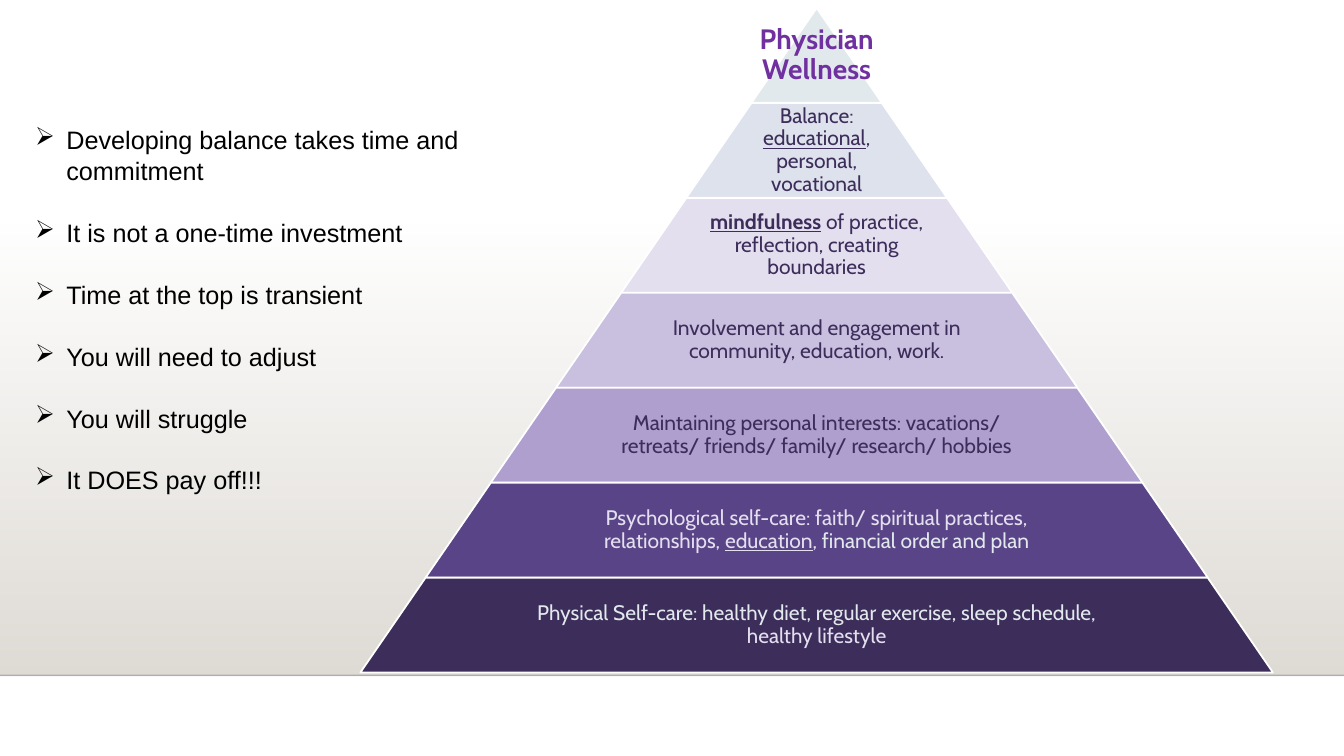
"""Build the physician wellness pyramid slide."""
from dataclasses import dataclass

import lxml.etree
import pptx
import pptx.dml.color
import pptx.enum.shapes
import pptx.enum.text
import pptx.oxml.ns
import pptx.util

Inches = pptx.util.Inches
Pt = pptx.util.Pt
qn = pptx.oxml.ns.qn

COLORS = {
    "backdrop": "DFDBD5", "rule": "000001", "white": "FFFFFF", "black": "000000",
    "title": "7030A0", "dark": "3C2D5A", "purple": "594487", "mid": "AF9FCF",
    "light": "C9BFDF", "pale": "E4DFEF", "blue": "DEE2ED", "mist": "E1E9EC",
}
SLIDE_WIDTH = 13.33
CENTER = 8.1
PYRAMID_TOP = 0.08
TIER_HEIGHT = 0.94
TIER_PITCH = 0.942
TIER_GROWTH = 1.293
SLOPE = 0.688
TEXT_SHARE = 0.65


@dataclass(frozen=True)
class Span:
    text: str
    color: str = "dark"
    bold: bool = False
    underline: bool = False


@dataclass(frozen=True)
class Tier:
    fill: str
    spans: tuple[Span, ...]
    size: int = 15
    text_share: float = TEXT_SHARE
    inset: float = 0.02


TIERS = (
    Tier("mist", (Span("Physician Wellness", "title", bold=True),), 20, 1, 0.03),
    Tier("blue", (Span("Balance: "), Span("educational", underline=True),
                  Span(", personal, vocational"))),
    Tier("pale", (Span("mindfulness", bold=True, underline=True),
                  Span(" of practice, reflection, creating boundaries"))),
    Tier("light", (Span("Involvement and engagement in community, education, work."),)),
    Tier("mid", (Span("Maintaining personal interests: vacations/ retreats/ friends/ "
                      "family/ research/ hobbies"),)),
    Tier("purple", (Span("Psychological self-care: faith/ spiritual practices, "
                         "relationships, ", "pale"),
                    Span("education", "pale", underline=True), Span(", ", "pale"),
                    Span("financial order and plan", "mist"))),
    Tier("dark", (Span("Physical Self-care: healthy diet, regular exercise, "
                       "sleep schedule, ", "mist"),
                  Span("healthy lifestyle", "pale"))),
)
REMINDERS = (
    "Developing balance takes time and commitment",
    "It is not a one-time investment",
    "Time at the top is transient",
    "You will need to adjust",
    "You will struggle",
    "It DOES pay off!!!",
)


def rgb(name: str) -> pptx.dml.color.RGBColor:
    return pptx.dml.color.RGBColor.from_string(COLORS[name])


def set_alpha(parent, percent: int) -> None:
    color = next(parent.iter(qn("a:srgbClr")))
    lxml.etree.SubElement(color, qn("a:alpha")).set("val", str(percent * 1000))


def draw_backdrop(page) -> None:
    panel = page.shapes.add_shape(pptx.enum.shapes.MSO_SHAPE.RECTANGLE, 0, Inches(2.21),
                                  Inches(SLIDE_WIDTH), Inches(4.49))
    panel.shadow.inherit = False
    panel.line.fill.background()
    panel.fill.gradient()
    panel.fill.gradient_angle = 270
    for stop, position in zip(panel.fill.gradient_stops, (0, 1)):
        stop.position = position
        stop.color.rgb = rgb("backdrop")
    set_alpha(panel.element.spPr, 0)

    rule = page.shapes.add_connector(pptx.enum.shapes.MSO_CONNECTOR.STRAIGHT,
                                     0, Inches(6.7), Inches(SLIDE_WIDTH), Inches(6.7))
    rule.line.color.rgb = rgb("rule")
    rule.line.width = Pt(1)
    set_alpha(rule.element.spPr, 20)
    lxml.etree.SubElement(rule.element.spPr, qn("a:effectLst"))


def draw_tier(page, index: int, tier: Tier) -> None:
    top = PYRAMID_TOP + index * TIER_PITCH
    width = (index + 1) * TIER_GROWTH
    band = page.shapes.add_shape(pptx.enum.shapes.MSO_SHAPE.TRAPEZOID,
                                 Inches(CENTER - width / 2), Inches(top),
                                 Inches(width), Inches(TIER_HEIGHT))
    band.adjustments[0] = SLOPE
    band.shadow.inherit = False
    band.fill.solid()
    band.fill.fore_color.rgb = rgb(tier.fill)
    band.line.color.rgb = rgb("white")
    band.line.width = Pt(1.25)

    text_width = width * tier.text_share
    box = page.shapes.add_textbox(Inches(CENTER - text_width / 2), Inches(top),
                                  Inches(text_width), Inches(TIER_HEIGHT))
    frame = box.text_frame
    frame.word_wrap = True
    frame.vertical_anchor = pptx.enum.text.MSO_ANCHOR.MIDDLE
    frame.margin_left = frame.margin_right = Inches(tier.inset)
    frame.margin_top = frame.margin_bottom = Inches(tier.inset)
    para = frame.paragraphs[0]
    para.alignment = pptx.enum.text.PP_ALIGN.CENTER
    para.line_spacing = 0.9
    for span in tier.spans:
        run = para.add_run()
        run.text = span.text
        run.font.name = "Cabin"
        run.font.size = Pt(tier.size)
        run.font.bold = span.bold
        run.font.underline = span.underline
        run.font.color.rgb = rgb(span.color)


def draw_reminders(page) -> None:
    box = page.shapes.add_textbox(Inches(0.25), Inches(1.17), Inches(4.92), Inches(3.74))
    frame = box.text_frame
    frame.word_wrap = True
    frame.text = "\n".join(REMINDERS)
    for index, para in enumerate(frame.paragraphs):
        properties = para._p.get_or_add_pPr()
        properties.set("marL", str(Inches(0.31)))
        properties.set("indent", str(Inches(-0.31)))
        lxml.etree.SubElement(properties, qn("a:buChar")).set("char", "➢")
        para.line_spacing = 1.04
        if index:
            para.space_before = Pt(21.7)
        for run in para.runs:
            run.font.name = "Arial"
            run.font.size = Pt(18)
            run.font.color.rgb = rgb("black")


def main() -> None:
    deck = pptx.Presentation()
    deck.slide_width = Inches(SLIDE_WIDTH)
    deck.slide_height = Inches(7.5)
    page = deck.slides.add_slide(deck.slide_layouts[6])
    draw_backdrop(page)
    for index, tier in enumerate(TIERS):
        draw_tier(page, index, tier)
    draw_reminders(page)
    deck.save("out.pptx")


if __name__ == "__main__":
    main()
